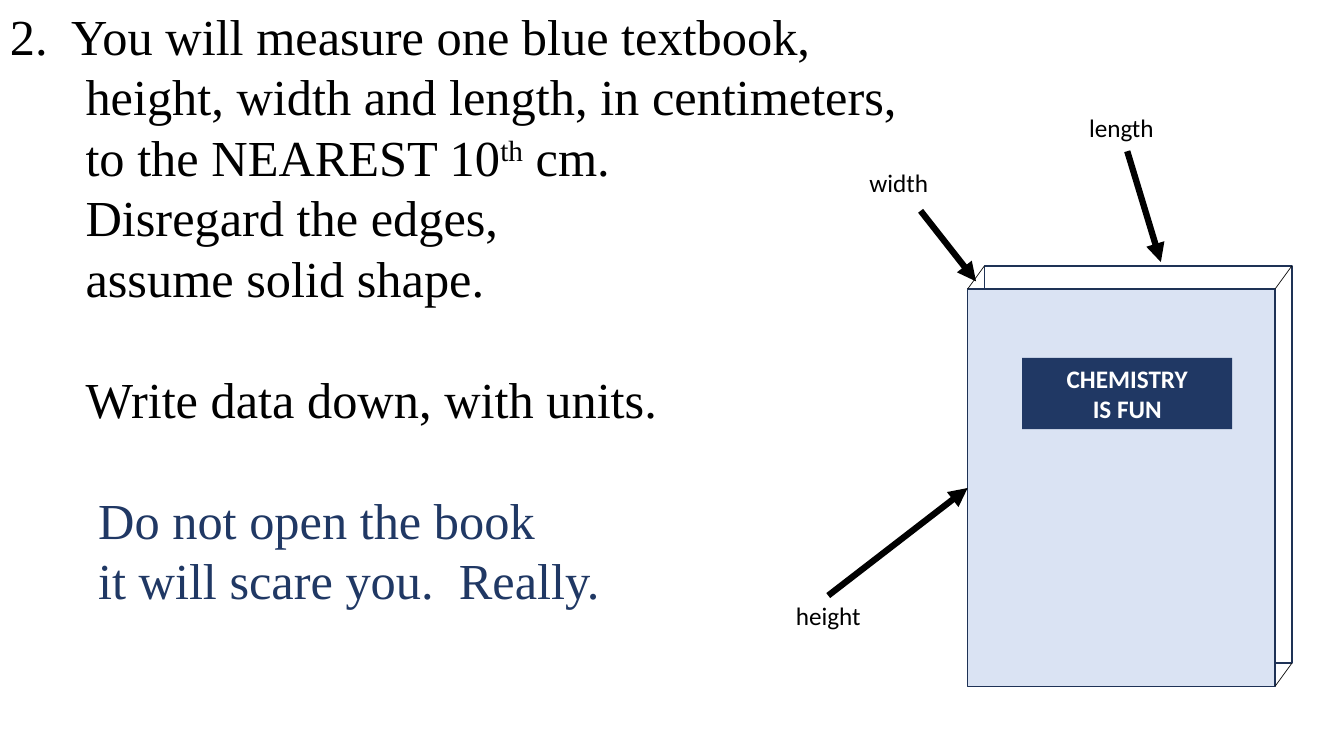
from dataclasses import dataclass

from lxml import etree
from pptx import Presentation
from pptx.dml.color import RGBColor
from pptx.enum.shapes import MSO_CONNECTOR, MSO_SHAPE
from pptx.enum.text import MSO_ANCHOR, PP_ALIGN
from pptx.oxml.ns import qn
from pptx.util import Inches, Pt

RECTANGLE = MSO_SHAPE.RECTANGLE
STRAIGHT = MSO_CONNECTOR.STRAIGHT
LEFT, CENTER = PP_ALIGN.LEFT, PP_ALIGN.CENTER
TOP, MIDDLE = MSO_ANCHOR.TOP, MSO_ANCHOR.MIDDLE

# The slide is a grid of square cells
COLUMNS, ROWS = 160, 90
CELL = Inches(7.5) / ROWS


@dataclass(frozen=True)
class Theme:
    ink: str = "000000"
    navy: str = "203864"
    outline: str = "1E3256"
    edge: str = "0D0D0D"
    cover: str = "DAE3F3"
    paper: str = "FFFFFF"
    body_font: str = "Times New Roman"
    label_font: str = "Calibri"
    body_size: float = 36
    body_leading: float = 43.2
    label_size: float = 18


THEME = Theme()


def cells(*counts):
    return [round(count * CELL) for count in counts]


def color(value):
    return RGBColor.from_string(value)


def write(para, text, font=THEME.label_font, size=THEME.label_size,
          ink=THEME.ink, bold=False, raised=False):
    span = para.add_run()
    span.text = text
    span.font.name, span.font.size, span.font.bold = font, Pt(size), bold
    span.font.color.rgb = color(ink)
    if raised:
        span.font._element.set("baseline", "30000")


def add_text(page, area, anchor=TOP):
    box = page.shapes.add_textbox(*cells(*area))
    box.text_frame.word_wrap = True
    box.text_frame.vertical_anchor = anchor
    return box.text_frame


def add_label(page, text, left, top):
    para = add_text(page, (left, top, 24.8, 4.85)).paragraphs[0]
    para.alignment = CENTER
    write(para, text)


def add_panel(page, area, fill, outline=None):
    panel = page.shapes.add_shape(RECTANGLE, *cells(*area))
    panel.shadow.inherit = False
    panel.fill.solid()
    panel.fill.fore_color.rgb = color(fill)
    if outline:
        panel.line.color.rgb = color(outline)
        panel.line.width = Pt(1)
    else:
        panel.line.fill.background()
    return panel


def add_line(page, start, end, ink=THEME.edge, width=0.5, arrow=False):
    line = page.shapes.add_connector(STRAIGHT, *cells(*start, *end))
    line.line.color.rgb = color(ink)
    line.line.width = Pt(width)
    if arrow:
        etree.SubElement(line.line._get_or_add_ln(), qn("a:tailEnd"), type="triangle")
    etree.SubElement(line._element.spPr, qn("a:effectLst"))


def add_instructions(page):
    # Each line: indent in cells, blank lines above, colour, spans
    lines = [
        (0, 0, THEME.ink, ["2.  You will measure one blue textbook,"]),
        (9, 0, THEME.ink, ["height, width and length, in centimeters,"]),
        (9, 0, THEME.ink, ["to the NEAREST 10", "th", " cm."]),
        (9, 0, THEME.ink, ["Disregard the edges,"]),
        (9, 0, THEME.ink, ["assume solid shape."]),
        (9, 1, THEME.ink, ["Write data down, with units."]),
        (10.5, 1, THEME.navy, ["Do not open the book"]),
        (10.5, 0, THEME.navy, ["it will scare you.  Really."]),
    ]
    frame = add_text(page, (0, 0, COLUMNS, 74))
    for index, (indent, gap, ink, spans) in enumerate(lines):
        para = frame.add_paragraph() if index else frame.paragraphs[0]
        para.alignment = LEFT
        para.line_spacing = Pt(THEME.body_leading)
        para.space_before = Pt(gap * THEME.body_leading)
        para._p.get_or_add_pPr().set("marL", str(cells(indent)[0]))
        for text in spans:
            write(para, text, font=THEME.body_font, size=THEME.body_size,
                  ink=ink, raised=text == "th")


def add_book(page):
    left, top, width, height = 115.2, 34.4, 36.6, 47.3
    shift, rise = 2, 2.75
    add_panel(page, (left + shift, top - rise, width, height), THEME.paper, THEME.outline)
    add_panel(page, (left, top, width, height), THEME.cover, THEME.outline)

    # Edges that join the visible corners of the two covers
    right, bottom = left + width, top + height
    for x, y in [(left, top), (right, top), (right, bottom)]:
        add_line(page, (x, y), (x + shift, y - rise))

    # Title plate
    plate = add_panel(page, (121.7, 42.6, 25, 8.5), THEME.navy).text_frame
    plate.word_wrap = True
    plate.vertical_anchor = MIDDLE
    for index, text in enumerate(["CHEMISTRY", "IS FUN"]):
        para = plate.add_paragraph() if index else plate.paragraphs[0]
        para.alignment = CENTER
        write(para, text, ink=THEME.paper, bold=True)


def add_dimensions(page):
    # Each dimension: name, label corner, arrow start and end
    dimensions = [
        ("width", (94.6, 19.3), (109.6, 25.1), (116.2, 33.5)),
        ("height", (86.2, 70.9), (98.6, 70.9), (115.2, 58.1)),
        ("length", (121.1, 12.8), (134.2, 18), (138.2, 31.2)),
    ]
    for name, corner, start, end in dimensions:
        add_label(page, name, *corner)
        add_line(page, start, end, ink=THEME.ink, width=4.5, arrow=True)


def main():
    deck = Presentation()
    deck.slide_width, deck.slide_height = cells(COLUMNS, ROWS)
    page = deck.slides.add_slide(deck.slide_layouts[6])
    add_instructions(page)
    add_book(page)
    add_dimensions(page)
    deck.save("out.pptx")


if __name__ == "__main__":
    main()
